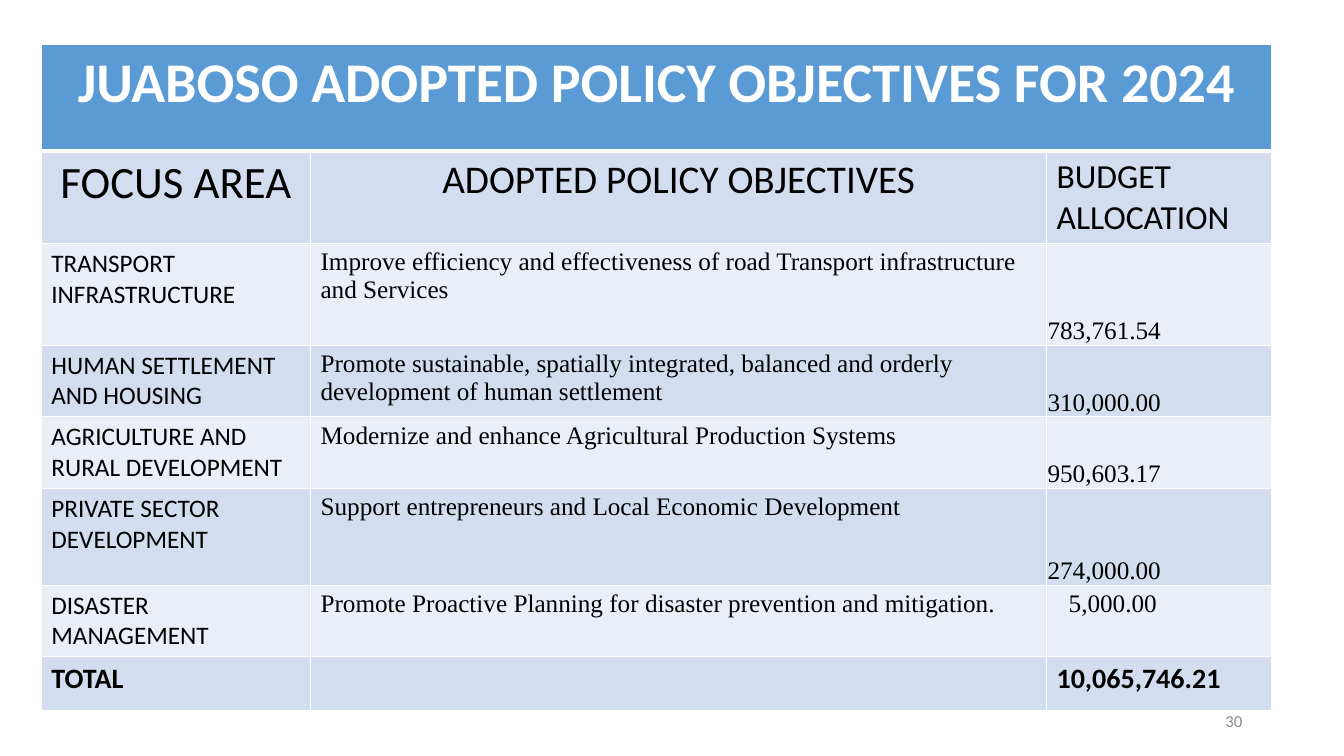
from lxml.etree import SubElement
from pptx import Presentation
from pptx.dml.color import RGBColor
from pptx.enum.text import MSO_ANCHOR as Anchor, PP_ALIGN as Align
from pptx.oxml.ns import qn
from pptx.util import Pt

PX = 9144  # EMU per px, 100 px to the inch
WHITE = RGBColor(0xFF, 0xFF, 0xFF)
BLACK = RGBColor(0, 0, 0)
GREY = RGBColor(0x8C, 0x8C, 0x8C)
HEADER_BLUE = RGBColor(0x5B, 0x9B, 0xD5)
BAND_DARK = RGBColor(0xD2, 0xDE, 0xEF)
BAND_LIGHT = RGBColor(0xEA, 0xEF, 0xF7)
SANS, SERIF = "Calibri", "Times New Roman"

TITLE = "JUABOSO ADOPTED POLICY OBJECTIVES FOR 2024"
HEADINGS = [("FOCUS AREA", 32, Align.CENTER),
            ("ADOPTED POLICY OBJECTIVES", 28, Align.CENTER),
            ("BUDGET ALLOCATION", 24, Align.LEFT)]
POLICIES = [
    ("TRANSPORT INFRASTRUCTURE",
     "Improve efficiency and effectiveness of road Transport infrastructure and Services",
     "783,761.54"),
    ("HUMAN SETTLEMENT AND HOUSING",
     "Promote sustainable, spatially integrated, balanced and orderly "
     "development of human settlement",
     "310,000.00"),
    ("AGRICULTURE AND RURAL DEVELOPMENT",
     "Modernize and enhance Agricultural Production Systems", "950,603.17"),
    ("PRIVATE SECTOR DEVELOPMENT",
     "Support entrepreneurs and Local Economic Development", "274,000.00"),
    ("DISASTER MANAGEMENT",
     "Promote Proactive Planning for disaster prevention and mitigation.", "5,000.00"),
]
TOTAL = ("TOTAL", "", "10,065,746.21")
COLUMN_WIDTHS = [267, 730, 223]
ROW_HEIGHTS = [106, 91, 101, 71, 71, 96, 71, 53]


class SlideBuilder:
    def __init__(self, slide):
        self.slide = slide

    def fill_text(self, frame, text, size, font=SANS, color=BLACK, bold=False,
                  align=Align.LEFT):
        frame.text = text
        paragraph = frame.paragraphs[0]
        paragraph.alignment = align
        for style in [paragraph.font] + [run.font for run in paragraph.runs]:
            style.size, style.name, style.bold = Pt(size), font, bold
            style.color.rgb = color

    def text_box(self, left, top, width, height, text, size, **style):
        box = self.slide.shapes.add_textbox(left * PX, top * PX, width * PX, height * PX)
        box.text_frame.word_wrap = True
        box.text_frame.vertical_anchor = Anchor.MIDDLE
        self.fill_text(box.text_frame, text, size, **style)

    def table(self, left, top, widths, heights):
        table = self.slide.shapes.add_table(
            len(heights), len(widths), left * PX, top * PX,
            sum(widths) * PX, sum(heights) * PX).table
        for column, width in zip(table.columns, widths):
            column.width = width * PX
        for row, height in zip(table.rows, heights):
            row.height = height * PX
        return table

    def borders(self, cell, bottom=1, top=1):
        properties = cell._tc.get_or_add_tcPr()
        for side, width in (("L", 1), ("R", 1), ("T", top), ("B", bottom)):
            line = SubElement(properties, qn(f"a:ln{side}"), w=str(Pt(width)))
            fill = SubElement(line, qn("a:solidFill"))
            SubElement(fill, qn("a:srgbClr"), val=str(WHITE))

    def cell(self, cell, text, size, fill, **style):
        cell.fill.solid()
        cell.fill.fore_color.rgb = fill
        self.fill_text(cell.text_frame, text, size, **style)


def main():
    deck = Presentation()
    deck.slide_width, deck.slide_height = 1333 * PX, 750 * PX
    page = SlideBuilder(deck.slides.add_slide(deck.slide_layouts[6]))
    budget = page.table(41, 44, COLUMN_WIDTHS, ROW_HEIGHTS)

    # White grid, heavier under the title row
    for number, row in enumerate(budget.rows):
        for cell in row.cells:
            page.borders(cell, bottom=3 if number == 0 else 1, top=3 if number == 1 else 1)

    # Title row
    budget.cell(0, 0).merge(budget.cell(0, 2))
    page.cell(budget.cell(0, 0), TITLE, 40, HEADER_BLUE,
              color=WHITE, bold=True, align=Align.CENTER)

    # Column headings
    for column, (heading, size, align) in enumerate(HEADINGS):
        page.cell(budget.cell(1, column), heading, size, BAND_DARK, align=align)

    # Policy rows
    for row, policy in enumerate(POLICIES, start=2):
        band = BAND_DARK if row % 2 else BAND_LIGHT
        for column, (text, font) in enumerate(zip(policy, (SANS, SERIF, SERIF))):
            page.cell(budget.cell(row, column), text, 18, band, font=font)
        amount = budget.cell(row, 2)
        if row < len(POLICIES) + 1:
            amount.vertical_anchor = Anchor.BOTTOM
            amount.margin_left = amount.margin_top = amount.margin_right = PX
            amount.margin_bottom = 0
        else:
            amount.margin_left = 22 * PX

    # Total row
    for column, text in enumerate(TOTAL):
        page.cell(budget.cell(7, column), text, 20, BAND_DARK, bold=True)

    # Page number
    page.text_box(942, 695, 300, 40, "30", 12, color=GREY, align=Align.RIGHT)
    deck.save("out.pptx")


if __name__ == "__main__":
    main()
